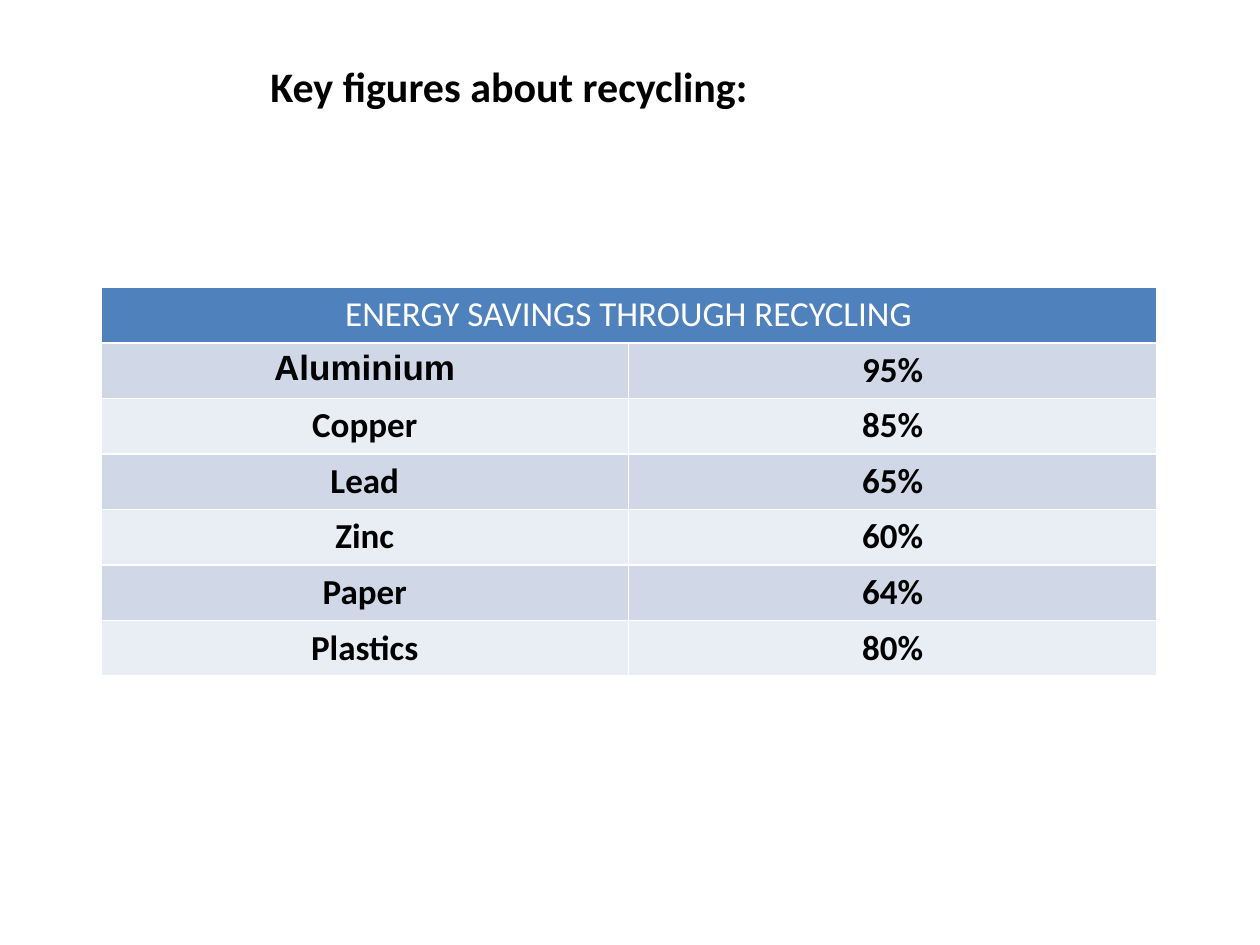
"""Build a slide with a table of energy savings through recycling."""
import pptx
import pptx.dml.color
import pptx.enum.text
import pptx.util

TITLE = "Key figures about recycling:"
HEADER = "ENERGY SAVINGS THROUGH RECYCLING"
SAVINGS = [
    ("Aluminium", "95%"),
    ("Copper", "85%"),
    ("Lead", "65%"),
    ("Zinc", "60%"),
    ("Paper", "64%"),
    ("Plastics", "80%"),
]
COLOURS = {
    "text": "000000",
    "header text": "FFFFFF",
    "header": "4F81BD",
    "odd row": "D0D8E8",
    "even row": "E9EDF4",
}
FORMATS = {
    "title": {"name": "Calibri", "size": pptx.util.Pt(24), "bold": True},
    "header": {"name": "Calibri", "size": pptx.util.Pt(20), "bold": False},
    "body": {"name": "Calibri", "size": pptx.util.Pt(20), "bold": True},
    "first material": {"name": "Arial", "size": pptx.util.Pt(20), "bold": True},
}
TITLE_BOX = (0.62, 0.29, 6.84, 0.78)
TABLE_BOX = (0.8, 2.28, 8.38, 3.03)


def colour(name):
    return pptx.dml.color.RGBColor.from_string(COLOURS[name])


def write(text_frame, text, style, text_colour="text"):
    text_frame.text = text
    paragraph = text_frame.paragraphs[0]
    paragraph.alignment = pptx.enum.text.PP_ALIGN.CENTER
    font = paragraph.runs[0].font
    for attribute, value in FORMATS[style].items():
        setattr(font, attribute, value)
    font.color.rgb = colour(text_colour)


def fill_cell(cell, text, style, fill, text_colour="text"):
    write(cell.text_frame, text, style, text_colour)
    cell.fill.solid()
    cell.fill.fore_color.rgb = colour(fill)


def add_title(slide):
    title = slide.shapes.title
    for attribute, value in zip(("left", "top", "width", "height"), TITLE_BOX):
        setattr(title, attribute, pptx.util.Inches(value))
    title.text_frame.vertical_anchor = pptx.enum.text.MSO_ANCHOR.MIDDLE
    write(title.text_frame, TITLE, "title")


def add_savings_table(slide):
    box = [pptx.util.Inches(value) for value in TABLE_BOX]
    table = slide.shapes.add_table(len(SAVINGS) + 1, 2, *box).table
    table.cell(0, 0).merge(table.cell(0, 1))
    fill_cell(table.cell(0, 0), HEADER, "header", "header", "header text")
    for row, values in enumerate(SAVINGS, start=1):
        fill = "odd row" if row % 2 else "even row"
        for column, text in enumerate(values):
            style = "first material" if (row, column) == (1, 0) else "body"
            fill_cell(table.cell(row, column), text, style, fill)


def main():
    presentation = pptx.Presentation()
    presentation.slide_width = pptx.util.Inches(10)
    presentation.slide_height = pptx.util.Inches(7.5)
    slide = presentation.slides.add_slide(presentation.slide_layouts[5])
    add_title(slide)
    add_savings_table(slide)
    presentation.save("out.pptx")


if __name__ == "__main__":
    main()
